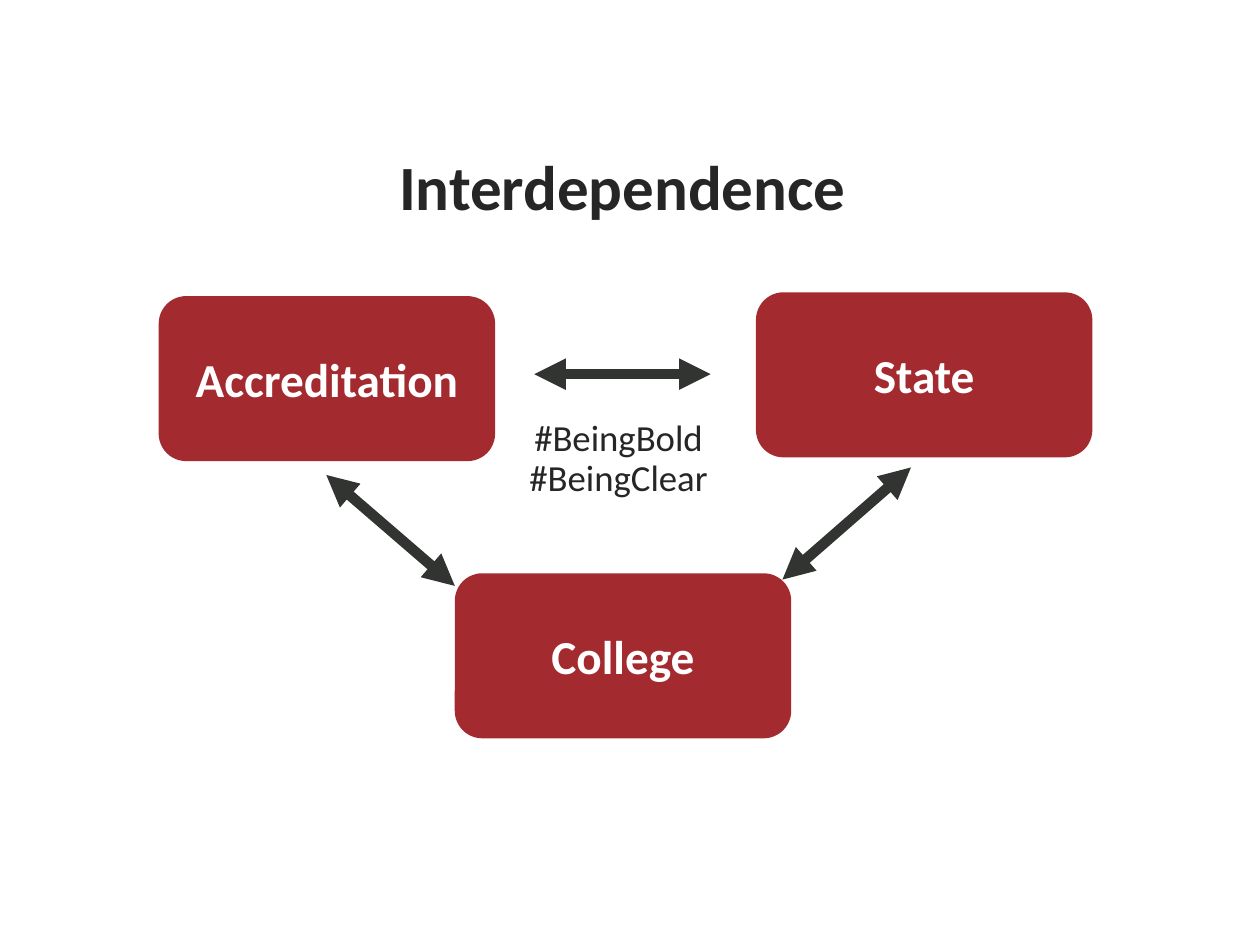
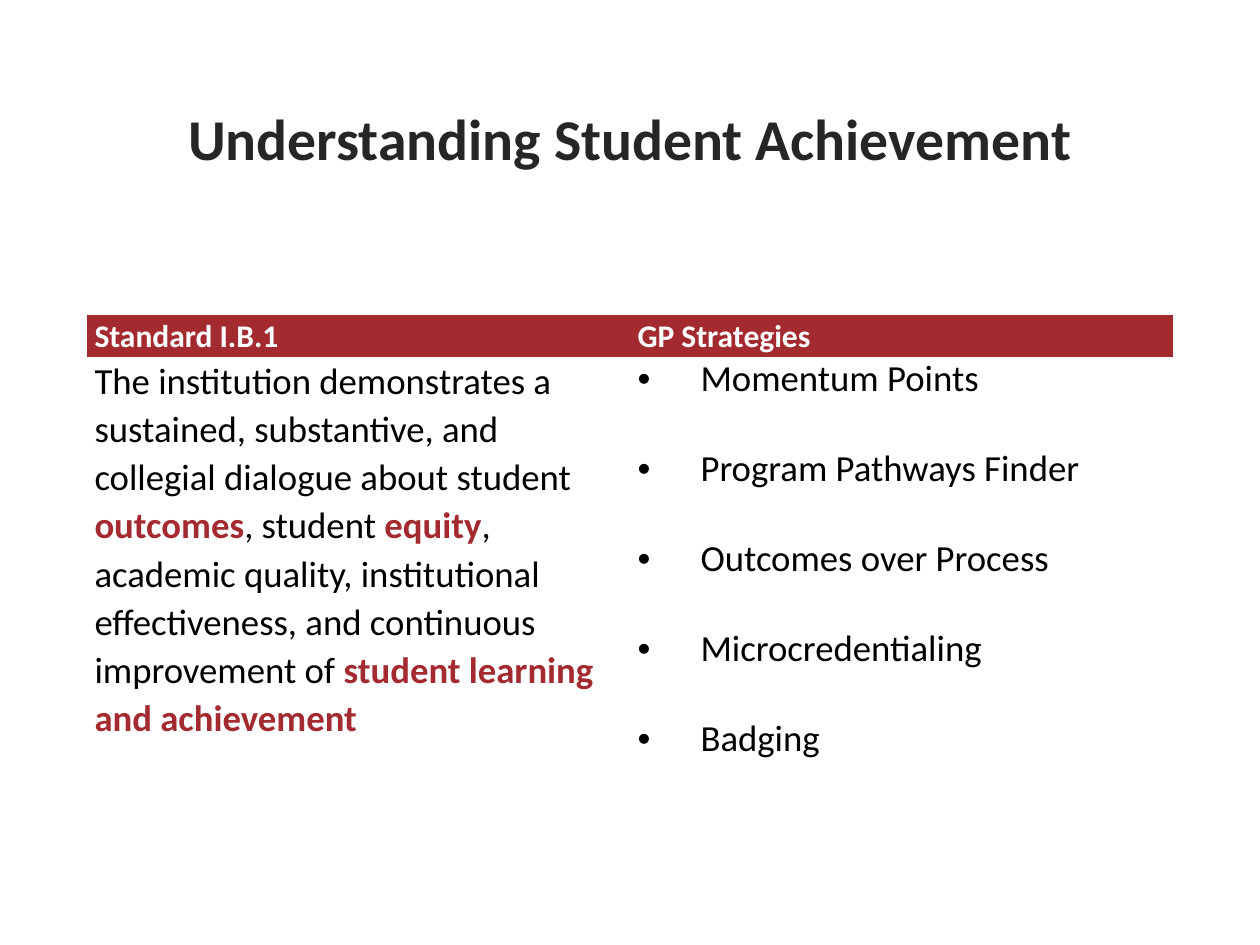
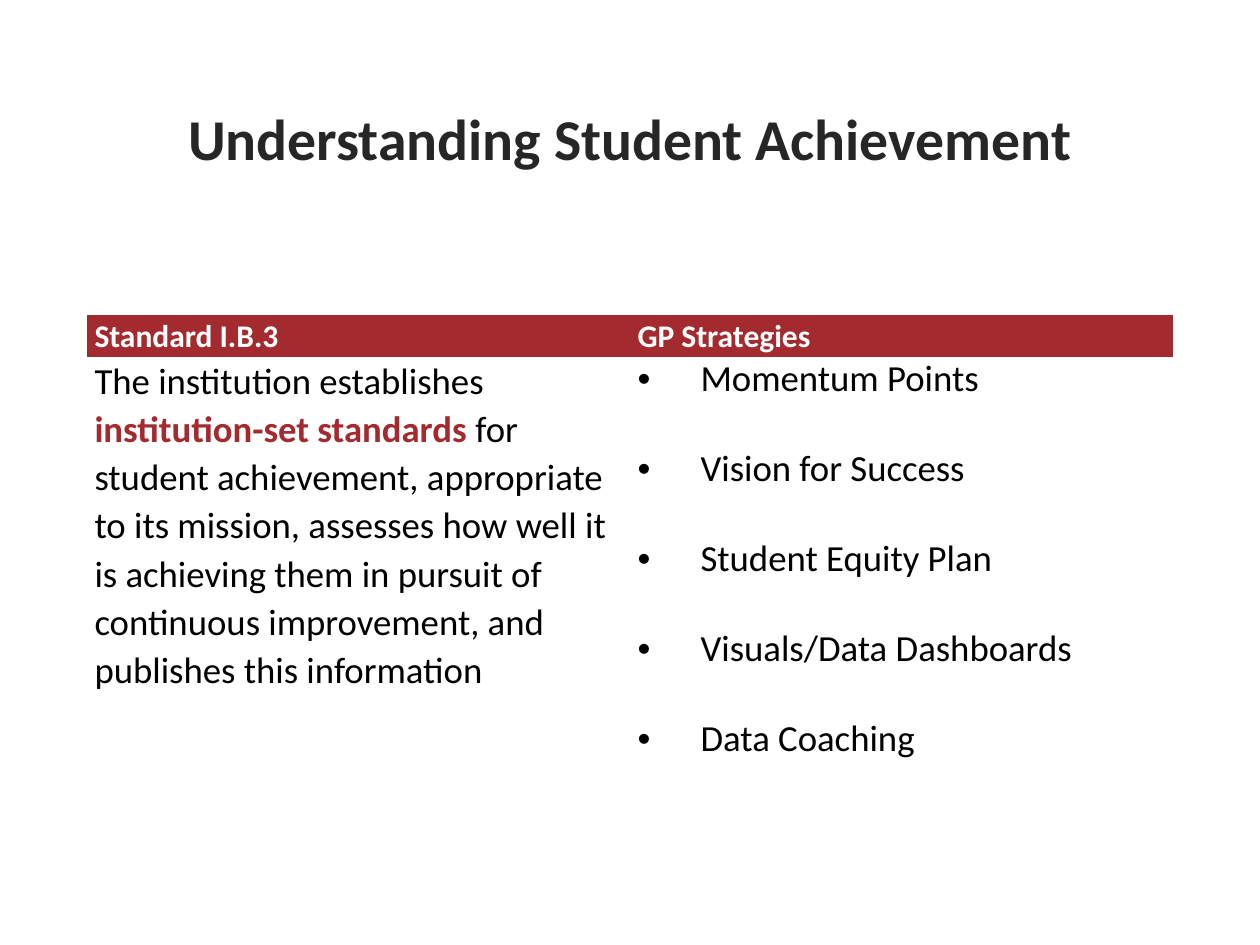
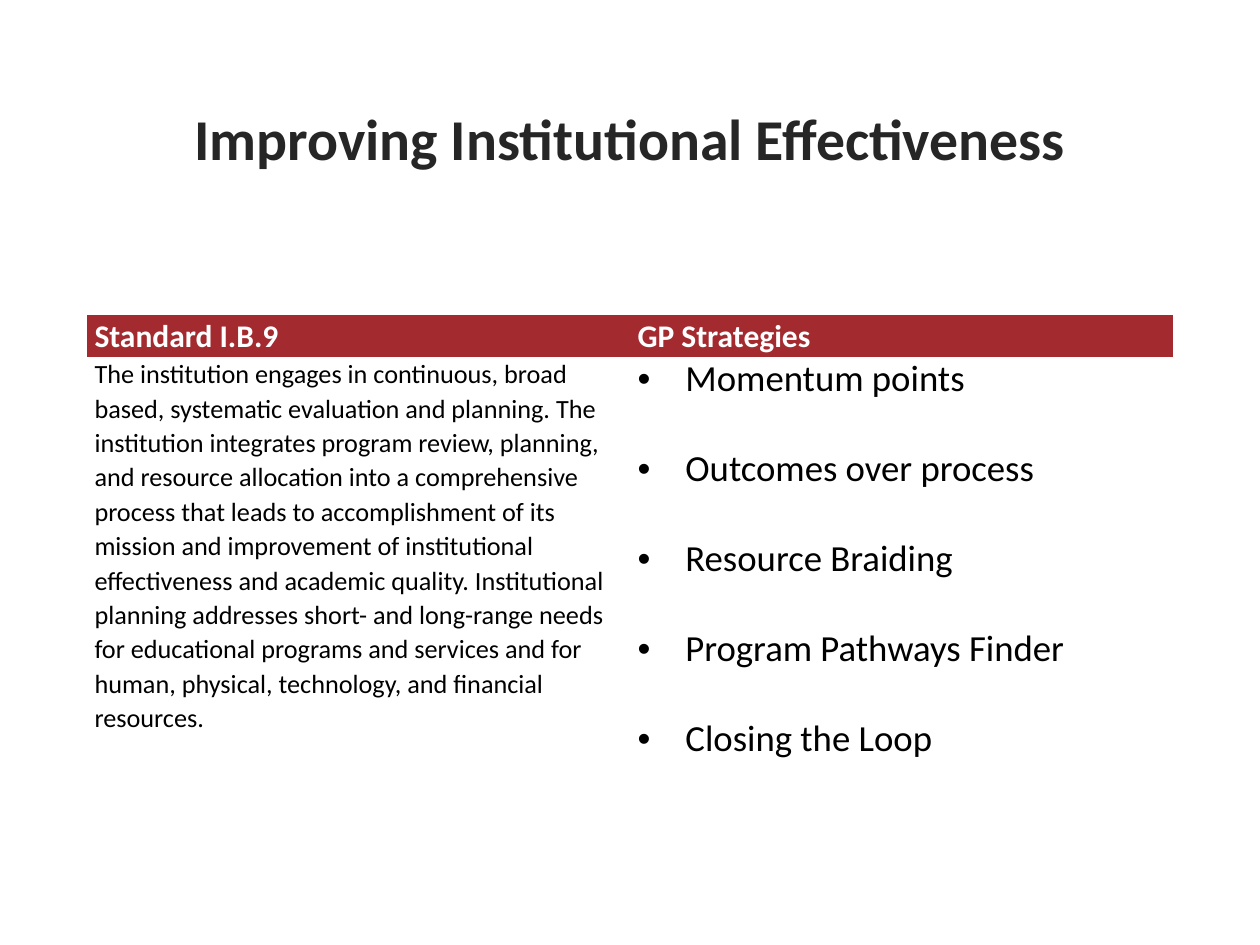
from pptx import Presentation
from pptx.dml.color import RGBColor
from pptx.enum.shapes import MSO_CONNECTOR, MSO_SHAPE
from pptx.enum.text import MSO_ANCHOR, PP_ALIGN
from pptx.oxml.ns import qn
from pptx.oxml.xmlchemy import OxmlElement
from pptx.util import Emu, Pt

ROUNDED = MSO_SHAPE.ROUNDED_RECTANGLE
STRAIGHT = MSO_CONNECTOR.STRAIGHT
MIDDLE = MSO_ANCHOR.MIDDLE
CENTER = PP_ALIGN.CENTER

FONT = "Calibri"
RED, DARK, ARROW = "A32B30", "262626", "323432"
WHITE, BLACK = "FFFFFF", "000000"
NO_STYLE_NO_GRID = "{2D5ABB26-0587-4C30-8999-92F81FD0307C}"


def px(value):
    """Convert px, 100 to the inch, into EMU."""
    return Emu(value * 9144)


def color(hex_code):
    return RGBColor.from_string(hex_code)


def set_values(target, values):
    for name, value in values.items():
        setattr(target, name, value)


def add_child(parent, tag, **attributes):
    child = OxmlElement(tag)
    for name, value in attributes.items():
        child.set(name, value)
    parent.append(child)


class DeckBuilder:
    def __init__(self):
        self.deck = Presentation()
        set_values(self.deck, {"slide_width": px(1000), "slide_height": px(750)})
        self.page = None

    def new_page(self):
        self.page = self.deck.slides.add_slide(self.deck.slide_layouts[6])

    def add_span(self, para, text, size, hex_code, bold=False, **layout):
        set_values(para, layout)
        span = para.add_run()
        span.text = text
        set_values(span.font, {"name": FONT, "size": Pt(size), "bold": bold})
        span.font.color.rgb = color(hex_code)

    def text(self, place, lines, size, bold=False):
        box = self.page.shapes.add_textbox(*map(px, place))
        frame = box.text_frame
        set_values(frame, {"word_wrap": True, "vertical_anchor": MIDDLE})
        for index, line in enumerate(lines):
            para = frame.add_paragraph() if index else frame.paragraphs[0]
            self.add_span(para, line, size, DARK, bold, alignment=CENTER, line_spacing=0.9)
        return frame

    def card(self, left, top, label):
        box = self.page.shapes.add_shape(ROUNDED, *map(px, (left, top, 267, 131)))
        box.shadow.inherit = False
        box.fill.solid()
        box.fill.fore_color.rgb = color(RED)
        box.line.fill.background()
        box.text_frame.vertical_anchor = MIDDLE
        self.add_span(box.text_frame.paragraphs[0], label, 27, WHITE, True, alignment=CENTER)

    def double_arrow(self, *ends):
        arrow = self.page.shapes.add_connector(STRAIGHT, *map(px, ends))
        arrow.line.width = Pt(6)
        arrow.line.color.rgb = color(ARROW)
        properties = arrow._element.spPr
        outline = properties.find(qn("a:ln"))
        for tag in ("a:headEnd", "a:tailEnd"):
            add_child(outline, tag, type="triangle")
        add_child(properties, "a:effectLst")

    def bullet(self, para, text, indent, first):
        properties = para._p.get_or_add_pPr()
        properties.set("marL", str(px(indent)))
        properties.set("indent", str(-px(indent)))
        self.add_span(para, text, 21, BLACK, space_before=Pt(0 if first else 25.7))
        add_child(properties, "a:buFont", typeface="Arial")
        add_child(properties, "a:buChar", char="•")

    def standard_table(self, standard, spans, strategies, size, body_height, indent):
        """Set a standard's wording beside the strategies that meet it."""
        frame = self.page.shapes.add_table(
            2, 2, *map(px, (69, 250, 862, 33 + body_height)))
        table = frame.table
        set_values(table, {"first_row": False, "horz_banding": False})
        table._tbl.tblPr.find(qn("a:tableStyleId")).text = NO_STYLE_NO_GRID
        for row, height in zip(table.rows, (33, body_height)):
            row.height = px(height)
        for cell in table.iter_cells():
            set_values(cell, {"margin_left": px(6), "margin_right": px(6),
                              "margin_top": 0, "margin_bottom": 0})
            cell.fill.background()

        for column, heading in enumerate((standard, "GP Strategies")):
            cell = table.cell(0, column)
            cell.fill.solid()
            cell.fill.fore_color.rgb = color(RED)
            self.add_span(cell.text_frame.paragraphs[0], heading, 18, WHITE, True,
                          line_spacing=1.07)

        wording = table.cell(1, 0).text_frame.paragraphs[0]
        for index, span in enumerate(spans):
            key_term = index % 2 == 1
            self.add_span(wording, span, size, RED if key_term else BLACK, key_term,
                          line_spacing=1.07)

        listing = table.cell(1, 1).text_frame
        for index, strategy in enumerate(strategies):
            para = listing.add_paragraph() if index else listing.paragraphs[0]
            self.bullet(para, strategy, indent, index == 0)

    def standard_page(self, title, **table):
        self.new_page()
        self.text((69, 40, 862, 145), [title], 33, True)
        self.standard_table(**table)

    def interdependence_page(self):
        self.new_page()
        self.text((63, 112, 862, 78), ["Interdependence"], 36, True)
        for left, top, label in ((126, 235, "Accreditation"), (600, 232, "State"),
                                 (361, 455, "College")):
            self.card(left, top, label)
        hashtags = self.text((408, 310, 166, 109), ["#BeingBold", "#BeingClear"], 21)
        set_values(hashtags, {"margin_left": px(7), "margin_right": px(7),
                              "margin_top": px(4), "margin_bottom": px(4)})
        for ends in ((259, 377, 361, 465), (723, 371, 621, 460), (564, 297, 424, 297)):
            self.double_arrow(*ends)


# Spans alternate between plain wording and key terms.
STANDARD_PAGES = [
    dict(
        title="Understanding Student Achievement",
        standard="Standard I.B.1",
        spans=["The institution demonstrates a sustained, substantive, and collegial "
               "dialogue about student ", "outcomes", ", student ", "equity",
               ", academic quality, institutional effectiveness, and continuous "
               "improvement of ", "student learning and achievement"],
        strategies=["Momentum Points", "Program Pathways Finder",
                    "Outcomes over Process", "Microcredentialing", "Badging"],
        size=21, body_height=350, indent=50),
    dict(
        title="Understanding Student Achievement",
        standard="Standard I.B.3",
        spans=["The institution establishes ", "institution-set standards",
               " for student achievement, appropriate to its mission, assesses how "
               "well it is achieving them in pursuit of continuous improvement, and "
               "publishes this information"],
        strategies=["Momentum Points", "Vision for Success", "Student Equity Plan",
                    "Visuals/Data Dashboards", "Data Coaching"],
        size=21, body_height=315, indent=50),
    dict(
        title="Improving Institutional Effectiveness",
        standard="Standard I.B.9",
        spans=["The institution engages in continuous, broad based, systematic "
               "evaluation and planning. The institution integrates program review, "
               "planning, and resource allocation into a comprehensive process that "
               "leads to accomplishment of its mission and improvement of "
               "institutional effectiveness and academic quality. Institutional "
               "planning addresses short- and long-range needs for educational "
               "programs and services and for human, physical, technology, and "
               "financial resources."],
        strategies=["Momentum points", "Outcomes over process", "Resource Braiding",
                    "Program Pathways Finder", "Closing the Loop"],
        size=15, body_height=315, indent=38),
]


def main():
    builder = DeckBuilder()
    builder.interdependence_page()
    for content in STANDARD_PAGES:
        builder.standard_page(**content)
    builder.deck.save("out.pptx")


if __name__ == "__main__":
    main()
